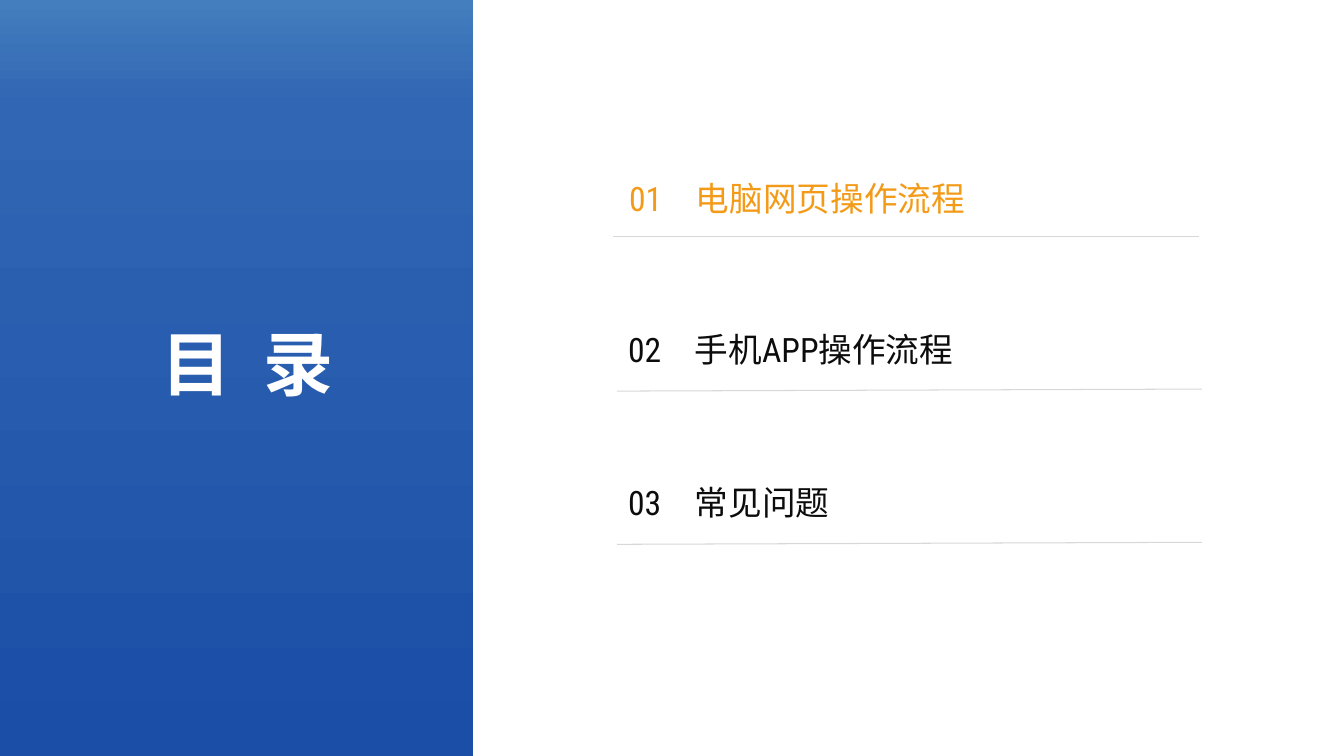
from copy import deepcopy
from dataclasses import dataclass

from lxml.etree import SubElement
from pptx import Presentation
from pptx.dml.color import RGBColor
from pptx.enum.shapes import MSO_CONNECTOR as Connector, MSO_SHAPE as Shape
from pptx.enum.text import MSO_ANCHOR as Anchor, MSO_AUTO_SIZE as AutoSize, PP_ALIGN as Align
from pptx.oxml.ns import qn
from pptx.slide import Slide
from pptx.util import Emu, Pt

PX = 9144
COLORS = {
    "panel_top": "457EBE",
    "panel_mid": "3066B3",
    "panel_bottom": "1A4EA7",
    "title": "FFFFFF",
    "active": "F39B18",
    "text": "0C0C0C",
    "rule": "D8D8D8",
}


@dataclass(frozen=True)
class Entry:
    text: str
    left: int
    top: int
    width: int
    rule_left: int
    rule_right: int
    rule_start: int
    rule_end: int
    color: str = "text"


ENTRIES = [
    Entry("01　电脑网页操作流程", 624, 177, 405, 608, 1189, 235, 235, "active"),
    Entry("02　手机APP操作流程", 623, 326, 476, 612, 1192, 388, 386),
    Entry("03　常见问题", 623, 478, 476, 612, 1192, 540, 538),
]


def px(n: int) -> Emu:
    return Emu(n * PX)


def rgb(name: str) -> RGBColor:
    return RGBColor.from_string(COLORS[name])


def add_text(s: Slide, text: str, left: int, top: int, width: int, height: int, *,
             font: str, size: int, color: str, bold: bool = False,
             align: Align = Align.LEFT, anchor: Anchor = Anchor.TOP,
             inset: bool = True, spacing: int = 0) -> None:
    tf = s.shapes.add_textbox(px(left), px(top), px(width), px(height)).text_frame
    tf.word_wrap = True
    tf.auto_size = AutoSize.SHAPE_TO_FIT_TEXT
    tf.vertical_anchor = anchor
    if not inset:
        tf.margin_left = tf.margin_top = tf.margin_right = tf.margin_bottom = 0
    p = tf.paragraphs[0]
    p.alignment = align
    r = p.add_run()
    r.text = text
    r.font.name = font
    r.font.size = Pt(size)
    r.font.bold = bold
    r.font.color.rgb = rgb(color)
    if spacing:
        r.font._element.set("spc", str(spacing))


def add_panel(s: Slide) -> None:
    sp = s.shapes.add_shape(Shape.RECTANGLE, px(-1), 0, px(470), px(750))
    sp.shadow.inherit = False
    sp.line.fill.background()
    sp.fill.gradient()
    sp.fill.gradient_angle = 270
    stops = sp._element.spPr.find(f".//{qn('a:gsLst')}")
    stops.append(deepcopy(stops[0]))
    shades = [(0, "panel_top"), (0.14, "panel_mid"), (1, "panel_bottom")]
    for stop, (position, color) in zip(sp.fill.gradient_stops, shades):
        stop.position = position
        stop.color.rgb = rgb(color)


def add_entry(s: Slide, entry: Entry) -> None:
    add_text(s, entry.text, entry.left, entry.top, entry.width, 40,
             font="Roboto Condensed", size=24, color=entry.color,
             anchor=Anchor.MIDDLE, inset=False)
    rule = s.shapes.add_connector(Connector.STRAIGHT, px(entry.rule_left), px(entry.rule_start),
                                  px(entry.rule_right), px(entry.rule_end))
    rule.line.color.rgb = rgb("rule")
    rule.line.width = Pt(0.75)
    SubElement(rule._element.spPr, qn("a:effectLst"))


def main() -> None:
    prs = Presentation()
    prs.slide_width, prs.slide_height = px(1333), px(750)
    s = prs.slides.add_slide(prs.slide_layouts[6])
    add_panel(s)
    add_text(s, "目 录", 94, 313, 303, 94, font="Calibri", size=50, color="title",
             bold=True, align=Align.CENTER, spacing=570)
    for entry in ENTRIES:
        add_entry(s, entry)
    prs.save("out.pptx")


if __name__ == "__main__":
    main()
